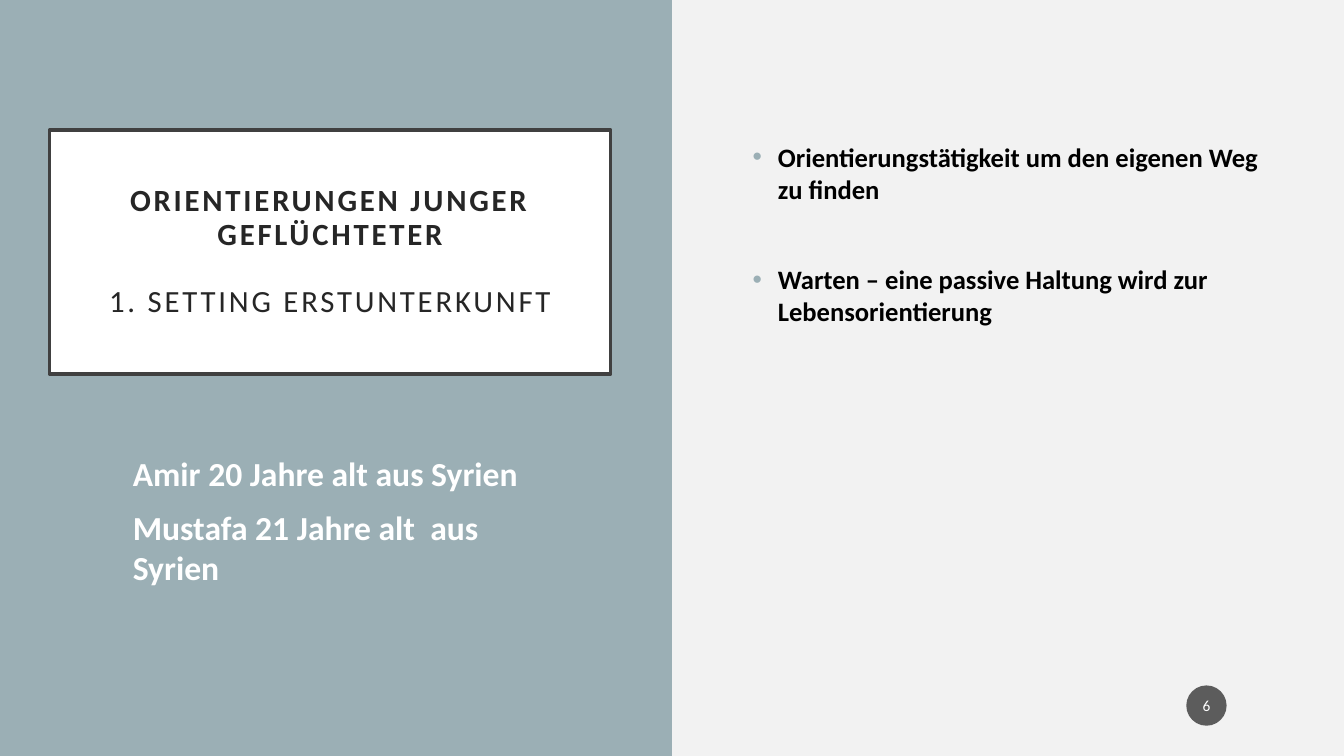
from dataclasses import dataclass

from lxml.etree import SubElement
from pptx import Presentation
from pptx.dml.color import RGBColor
from pptx.enum.shapes import MSO_SHAPE
from pptx.enum.text import MSO_ANCHOR, MSO_AUTO_SIZE, PP_ALIGN
from pptx.oxml.ns import qn
from pptx.shapes.autoshape import Shape
from pptx.slide import Slide
from pptx.text.text import TextFrame
from pptx.util import Pt

FONT = "Calibri"
COLORS = {
    "background": "F2F2F2",
    "panel": "9BAFB5",
    "white": "FFFFFF",
    "title_border": "404040",
    "title_text": "262626",
    "body_text": "000000",
    "badge": "1D1D1D",
}


@dataclass(frozen=True)
class Box:
    left: float
    top: float
    width: float
    height: float


@dataclass(frozen=True)
class TextStyle:
    size: float
    color: str
    gap: float = 0
    line_spacing: float = 1.0
    tracking: float = 0
    centered: bool = False
    bulleted: bool = False


@dataclass(frozen=True)
class Line:
    text: str
    bold: bool = True


@dataclass(frozen=True)
class TextBlock:
    box: Box
    top_inset: float
    style: TextStyle
    lines: tuple[Line, ...]


TITLE_BOX = Box(35.3, 92.9, 401, 174.2)
TITLE_STYLE = TextStyle(22, "title_text", gap=24, line_spacing=0.9, tracking=2, centered=True)
TITLE_LINES = (
    Line("ORIENTIERUNGEN JUNGER GEFLÜCHTETER"),
    Line("1. SETTING ERSTUNTERKUNFT", bold=False),
)
BLOCKS = (
    TextBlock(
        Box(530.6, 63.4, 379.4, 413.3), 37,
        TextStyle(19, "body_text", gap=42, bulleted=True),
        (
            Line("Orientierungstätigkeit um den eigenen Weg zu finden"),
            Line("Warten – eine passive Haltung wird zur Lebensorientierung"),
        ),
    ),
    TextBlock(
        Box(87.8, 279.4, 298.8, 191.5), 44,
        TextStyle(24, "white", gap=10),
        (
            Line("Amir 20 Jahre alt aus Syrien"),
            Line("Mustafa 21 Jahre alt  aus Syrien"),
        ),
    ),
)
BADGE_BOX = Box(847.4, 489.6, 28.8, 28.8)
BADGE_OPACITY = 70


def rgb(name: str) -> RGBColor:
    return RGBColor.from_string(COLORS[name])


def place(shape: Shape, box: Box) -> None:
    shape.left, shape.top = Pt(box.left), Pt(box.top)
    shape.width, shape.height = Pt(box.width), Pt(box.height)


def set_insets(frame: TextFrame, horizontal: float, top: float, bottom: float) -> None:
    frame.margin_left = frame.margin_right = Pt(horizontal)
    frame.margin_top, frame.margin_bottom = Pt(top), Pt(bottom)


def write_lines(frame: TextFrame, lines: tuple[Line, ...], style: TextStyle) -> None:
    frame.word_wrap = True
    frame.auto_size = MSO_AUTO_SIZE.NONE
    for index, line in enumerate(lines):
        paragraph = frame.add_paragraph() if index else frame.paragraphs[0]
        paragraph.alignment = PP_ALIGN.CENTER if style.centered else PP_ALIGN.LEFT
        paragraph.line_spacing = style.line_spacing
        paragraph.space_before = Pt(style.gap if index else 0)
        if style.bulleted:
            properties = paragraph._p.get_or_add_pPr()
            properties.set("marL", str(Pt(18)))
            properties.set("indent", str(-Pt(18)))
            bullet_color = SubElement(properties, qn("a:buClr"))
            SubElement(bullet_color, qn("a:srgbClr"), val=COLORS["panel"])
            SubElement(properties, qn("a:buFont"), typeface="Arial")
            SubElement(properties, qn("a:buChar"), char="•")
        run = paragraph.add_run()
        run.text = line.text
        run.font.name = FONT
        run.font.size = Pt(style.size)
        run.font.bold = line.bold
        run.font.color.rgb = rgb(style.color)
        if style.tracking:
            run.font._element.set("spc", str(round(style.tracking * 100)))


def add_filled_shape(slide: Slide, kind: MSO_SHAPE, box: Box, color: str) -> Shape:
    shape = slide.shapes.add_shape(
        kind, Pt(box.left), Pt(box.top), Pt(box.width), Pt(box.height)
    )
    shape.shadow.inherit = False
    shape.fill.solid()
    shape.fill.fore_color.rgb = rgb(color)
    shape.line.fill.background()
    return shape


def add_panel(slide: Slide) -> None:
    """Fill the left half, behind the title."""
    panel = add_filled_shape(slide, MSO_SHAPE.RECTANGLE, Box(0, 0, 480, 540), "panel")
    slide.shapes.title._element.addprevious(panel._element)


def format_title(slide: Slide) -> None:
    title = slide.shapes.title
    place(title, TITLE_BOX)
    title.fill.solid()
    title.fill.fore_color.rgb = rgb("white")
    title.line.color.rgb = rgb("title_border")
    title.line.width = Pt(2.5)
    set_insets(title.text_frame, 14.4, 14.4, 14.4)
    title.text_frame.vertical_anchor = MSO_ANCHOR.MIDDLE
    write_lines(title.text_frame, TITLE_LINES, TITLE_STYLE)


def add_text_block(slide: Slide, block: TextBlock) -> None:
    text_box = slide.shapes.add_textbox(0, 0, 0, 0)
    place(text_box, block.box)
    set_insets(text_box.text_frame, 7.2, block.top_inset, 3.6)
    write_lines(text_box.text_frame, block.lines, block.style)


def add_page_badge(slide: Slide) -> None:
    badge = add_filled_shape(slide, MSO_SHAPE.OVAL, BADGE_BOX, "badge")
    color = badge._element.spPr.find(qn("a:solidFill")).find(qn("a:srgbClr"))
    SubElement(color, qn("a:alpha"), val=str(BADGE_OPACITY * 1000))
    set_insets(badge.text_frame, 1.4, 3.6, 3.6)
    badge.text_frame.vertical_anchor = MSO_ANCHOR.MIDDLE
    style = TextStyle(11, "white", centered=True)
    write_lines(badge.text_frame, (Line("6", bold=False),), style)


def main() -> None:
    presentation = Presentation()
    presentation.slide_width, presentation.slide_height = Pt(960), Pt(540)
    slide = presentation.slides.add_slide(presentation.slide_layouts.get_by_name("Title Only"))
    slide.background.fill.solid()
    slide.background.fill.fore_color.rgb = rgb("background")
    add_panel(slide)
    format_title(slide)
    for block in BLOCKS:
        add_text_block(slide, block)
    add_page_badge(slide)
    presentation.save("out.pptx")


if __name__ == "__main__":
    main()
